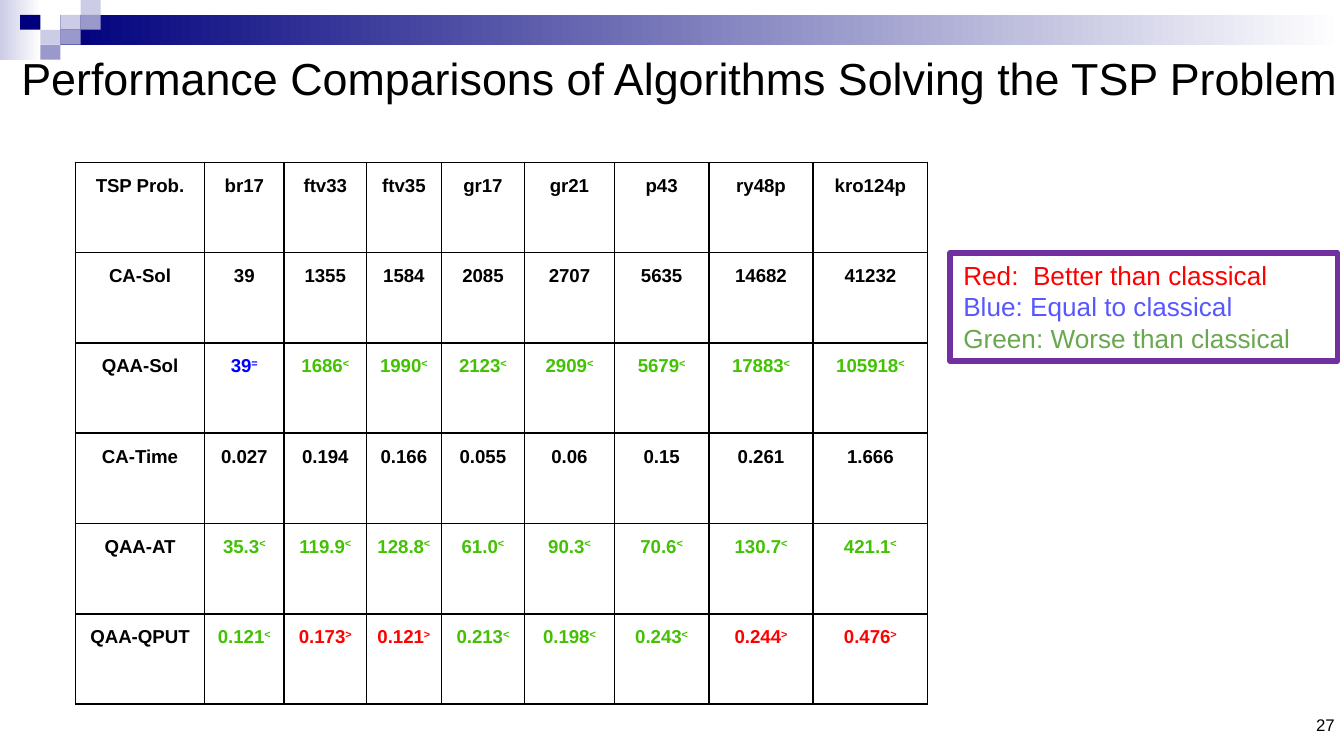
from pptx import Presentation
from pptx.dml.color import RGBColor
from pptx.enum.shapes import MSO_SHAPE as Shape
from pptx.enum.text import MSO_ANCHOR as Anchor, PP_ALIGN as Align
from pptx.oxml import parse_xml
from pptx.oxml.ns import nsdecls
from pptx.util import Pt

FONT = "Arial"
BLACK = RGBColor(0x00, 0x00, 0x00)
WHITE = RGBColor(0xFF, 0xFF, 0xFF)
NAVY = RGBColor(0x00, 0x00, 0x7D)
LAVENDER = RGBColor(0xCC, 0xCC, 0xE6)
PERIWINKLE = RGBColor(0x99, 0x99, 0xCC)
PURPLE = RGBColor(0x70, 0x30, 0xA0)
RED = RGBColor(0xFF, 0x00, 0x00)
BLUE = RGBColor(0x00, 0x00, 0xFF)
GREEN = RGBColor(0x43, 0xC1, 0x03)
LEGEND_BLUE = RGBColor(0x57, 0x57, 0xFF)
LEGEND_GREEN = RGBColor(0x6A, 0xA8, 0x4F)

# Mosaic squares as (column, row, colour)
TILE_W, TILE_H = 10.8, 8
TILES = [
    (3, 1, LAVENDER), (4, 0, LAVENDER), (4, 1, PERIWINKLE), (2, 2, LAVENDER),
    (1, 1, NAVY), (3, 2, PERIWINKLE), (2, 3, PERIWINKLE),
]

# A trailing mark compares the value with the classical one
MARK_COLORS = {"=": BLUE, "<": GREEN, ">": RED}
COLUMN_WIDTHS = [69, 42.75, 44, 40.25, 44.5, 48.25, 50.5, 56, 61.25]
ROW_HEIGHT = 48.36
RESULTS = [
    ["TSP Prob.", "br17", "ftv33", "ftv35", "gr17", "gr21", "p43", "ry48p", "kro124p"],
    ["CA-Sol", "39", "1355", "1584", "2085", "2707", "5635", "14682", "41232"],
    ["QAA-Sol", "39=", "1686<", "1990<", "2123<", "2909<", "5679<", "17883<", "105918<"],
    ["CA-Time", "0.027", "0.194", "0.166", "0.055", "0.06", "0.15", "0.261", "1.666"],
    ["QAA-AT", "35.3<", "119.9<", "128.8<", "61.0<", "90.3<", "70.6<", "130.7<", "421.1<"],
    ["QAA-QPUT", "0.121<", "0.173>", "0.121>", "0.213<", "0.198<", "0.243<", "0.244>", "0.476>"],
]

LEGEND = [
    ("Red:  Better than classical", RED),
    ("Blue: Equal to classical", LEGEND_BLUE),
    ("Green: Worse than classical", LEGEND_GREEN),
]


def set_font(paragraph, size, color=BLACK, bold=False):
    font = paragraph.font
    font.name, font.size, font.bold = FONT, Pt(size), bold
    font.color.rgb = color


def add_block(slide, left, top, width, height):
    block = slide.shapes.add_shape(
        Shape.RECTANGLE, Pt(left), Pt(top), Pt(width), Pt(height))
    block.shadow.inherit = False
    block.line.fill.background()
    return block


def add_fading_block(slide, left, top, width, height, color):
    fill = add_block(slide, left, top, width, height).fill
    fill.gradient()
    fill.gradient_angle = 0
    for stop, stop_color in zip(fill.gradient_stops, (color, WHITE)):
        stop.color.rgb = stop_color


def add_header_band(slide):
    add_fading_block(slide, 0, 0, 22, 4 * TILE_H, LAVENDER)
    add_fading_block(slide, 3 * TILE_W, TILE_H, 720 - 3 * TILE_W, 2 * TILE_H, NAVY)
    for column, row, color in TILES:
        tile = add_block(slide, column * TILE_W, row * TILE_H, TILE_W, TILE_H)
        tile.fill.solid()
        tile.fill.fore_color.rgb = color


def add_label(slide, text, left, top, width, height, size, anchor, align):
    frame = slide.shapes.add_textbox(
        Pt(left), Pt(top), Pt(width), Pt(height)).text_frame
    frame.word_wrap = True
    frame.vertical_anchor = anchor
    frame.margin_left = frame.margin_right = Pt(5)
    frame.margin_top = frame.margin_bottom = Pt(2.7)
    label = frame.paragraphs[0]
    label.text = text
    label.alignment = align
    set_font(label, size)


def add_borders(cell):
    properties = cell._tc.get_or_add_tcPr()
    for index, side in enumerate(("lnL", "lnR", "lnT", "lnB")):
        properties.insert(index, parse_xml(
            f'<a:{side} {nsdecls("a")} w="{Pt(1)}"><a:solidFill>'
            f'<a:srgbClr val="{BLACK}"/></a:solidFill></a:{side}>'))


def fill_cell(cell, text):
    cell.fill.background()
    cell.margin_left = cell.margin_right = Pt(1.5)
    cell.margin_top = cell.margin_bottom = Pt(1.5)
    add_borders(cell)
    entry = cell.text_frame.paragraphs[0]
    entry.alignment = Align.CENTER
    entry.line_spacing = 1.5
    mark = text[-1] if text[-1] in MARK_COLORS else ""
    entry.add_run().text = text.removesuffix(mark)
    if mark:
        superscript = entry.add_run()
        superscript.text = mark
        superscript._r.get_or_add_rPr().set("baseline", "30000")
    set_font(entry, 10, MARK_COLORS.get(mark, BLACK), bold=True)


def add_results_table(slide):
    table = slide.shapes.add_table(
        len(RESULTS), len(COLUMN_WIDTHS), Pt(40.5), Pt(87),
        Pt(sum(COLUMN_WIDTHS)), Pt(ROW_HEIGHT * len(RESULTS))).table
    table.first_row = table.horz_banding = False
    for column, width in zip(table.columns, COLUMN_WIDTHS):
        column.width = Pt(width)
    for row, values in zip(table.rows, RESULTS):
        row.height = Pt(ROW_HEIGHT)
        for cell, value in zip(row.cells, values):
            fill_cell(cell, value)


def add_legend(slide):
    legend = add_block(slide, 509, 135.5, 207.5, 58)
    legend.fill.background()
    legend.line.color.rgb = PURPLE
    legend.line.width = Pt(3)
    frame = legend.text_frame
    frame.word_wrap = True
    frame.vertical_anchor = Anchor.TOP
    for index, (text, color) in enumerate(LEGEND):
        entry = frame.add_paragraph() if index else frame.paragraphs[0]
        entry.text = text
        entry.alignment = Align.LEFT
        set_font(entry, 14, color)


def main():
    prs = Presentation()
    prs.slide_width, prs.slide_height = Pt(720), Pt(405)
    slide = prs.slides.add_slide(prs.slide_layouts[6])

    # Header, page number and title
    add_header_band(slide)
    add_label(slide, "27", 552, 382, 168, 14.5, 9, Anchor.BOTTOM, Align.RIGHT)
    add_label(slide, "Performance Comparisons of Algorithms Solving the TSP Problem",
              6.5, 23, 720, 37, 24, Anchor.MIDDLE, Align.LEFT)

    # Results and the key to their colours
    add_results_table(slide)
    add_legend(slide)

    prs.save("out.pptx")


if __name__ == "__main__":
    main()
